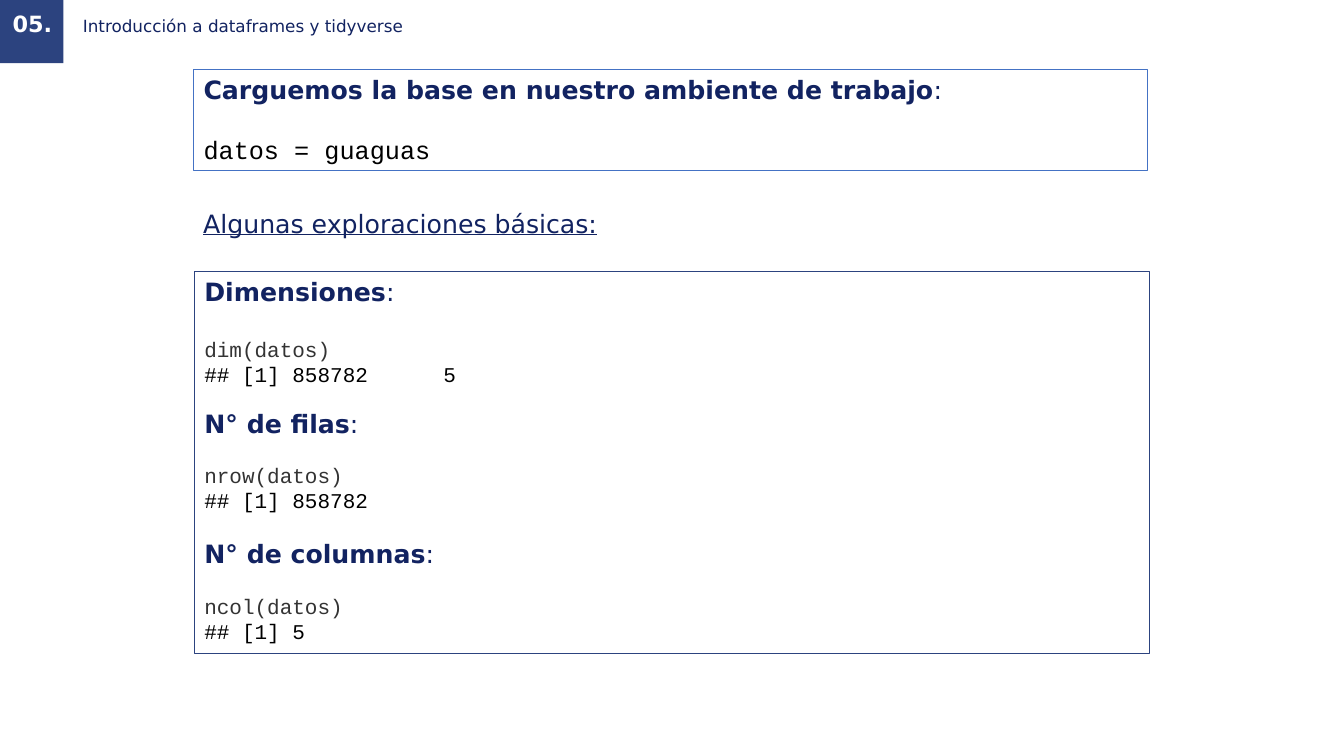
"""Build the slide that loads a data frame and explores its dimensions."""
from pptx import Presentation
from pptx.dml.color import RGBColor
from pptx.enum.shapes import MSO_SHAPE
from pptx.enum.text import MSO_ANCHOR, PP_ALIGN
from pptx.util import Cm, Pt

RECTANGLE = MSO_SHAPE.RECTANGLE
TOP, MIDDLE = MSO_ANCHOR.TOP, MSO_ANCHOR.MIDDLE
LEFT, CENTER = PP_ALIGN.LEFT, PP_ALIGN.CENTER

NAVY = RGBColor(0x12, 0x23, 0x61)
BAND = RGBColor(0x2C, 0x43, 0x7F)
BLUE = RGBColor(0x44, 0x72, 0xC4)
GRAY = RGBColor(0x33, 0x33, 0x33)
BLACK = RGBColor(0, 0, 0)
WHITE = RGBColor(0xFF, 0xFF, 0xFF)
SANS, MONO = "DejaVu Sans", "Courier New"

TITLE = "Introducción a dataframes y tidyverse"
NUMBER = "05."
LOAD_HEADING = "Carguemos la base en nuestro ambiente de trabajo"
LOAD_CODE = "datos = guaguas"
SUBTITLE = "Algunas exploraciones básicas:"
# heading, space before it, code, space before it, output
EXPLORATIONS = [
    ("Dimensiones", 0, "dim(datos)", 21.4, "## [1] 858782      5"),
    ("N° de filas", 15, "nrow(datos)", 17.5, "## [1] 858782"),
    ("N° de columnas", 18.3, "ncol(datos)", 17.5, "## [1] 5"),
]


def add_span(para, text, size, color, font=SANS, bold=False, underline=False):
    span = para.add_run()
    span.text = text
    span.font.name = font
    span.font.size = Pt(size)
    span.font.color.rgb = color
    span.font.bold = bold
    span.font.underline = underline


def add_para(frame, before=0):
    para = frame.paragraphs[0]
    if para.runs:
        para = frame.add_paragraph()
    para.alignment = LEFT
    if before:
        para.space_before = Pt(before)
    return para


def add_heading(frame, text, before=0):
    para = add_para(frame, before)
    add_span(para, text, 18, NAVY, bold=True)
    add_span(para, ":", 18, NAVY)


def add_code(frame, text, size, color, before=0):
    add_span(add_para(frame, before), text, size, color, MONO)


def add_rectangle(page, left, top, width, height, fill=None, line=None):
    box = page.shapes.add_shape(RECTANGLE, Cm(left), Cm(top), Cm(width), Cm(height))
    box.shadow.inherit = False
    if fill is None:
        box.fill.background()
    else:
        box.fill.solid()
        box.fill.fore_color.rgb = fill
    if line is None:
        box.line.fill.background()
    else:
        box.line.color.rgb = line
        box.line.width = Pt(0.75)
    box.text_frame.vertical_anchor = TOP
    return box.text_frame


def add_text_box(page, left, top, width, height):
    frame = page.shapes.add_textbox(Cm(left), Cm(top), Cm(width), Cm(height)).text_frame
    frame.word_wrap = True
    return frame


def add_header(page):
    add_rectangle(page, 0, 0, 1.6, 1.59, fill=BAND)
    title = page.shapes.title
    title.left, title.top = Cm(2.09), Cm(-0.01)
    title.width, title.height = Cm(30.25), Cm(1.37)
    title.text_frame.margin_left = 0
    title.text_frame.vertical_anchor = MIDDLE
    para = add_para(title.text_frame)
    para.line_spacing = 0.9
    add_span(para, TITLE, 12, NAVY)

    number = add_text_box(page, 0, 0.15, 1.63, 0.97)
    number.vertical_anchor = MIDDLE
    para = add_para(number)
    para.alignment = CENTER
    para.line_spacing = 0.9
    add_span(para, NUMBER, 16, WHITE, bold=True)


def main():
    deck = Presentation()
    deck.slide_width, deck.slide_height = Cm(33.87), Cm(19.05)
    page = deck.slides.add_slide(deck.slide_layouts[5])
    add_header(page)

    explore = add_rectangle(page, 4.9, 6.84, 24.07, 9.62, line=BAND)
    for heading, heading_gap, code, code_gap, output in EXPLORATIONS:
        add_heading(explore, heading, heading_gap)
        add_code(explore, code, 15, GRAY, code_gap)
        add_code(explore, output, 15, BLACK)

    load = add_rectangle(page, 4.88, 1.75, 24.03, 2.55, line=BLUE)
    add_heading(load, LOAD_HEADING)
    add_code(load, LOAD_CODE, 18, BLACK, 21.2)

    subtitle = add_text_box(page, 4.87, 5.13, 14.78, 1.02)
    add_span(add_para(subtitle), SUBTITLE, 18, NAVY, underline=True)
    deck.save("out.pptx")


if __name__ == "__main__":
    main()
